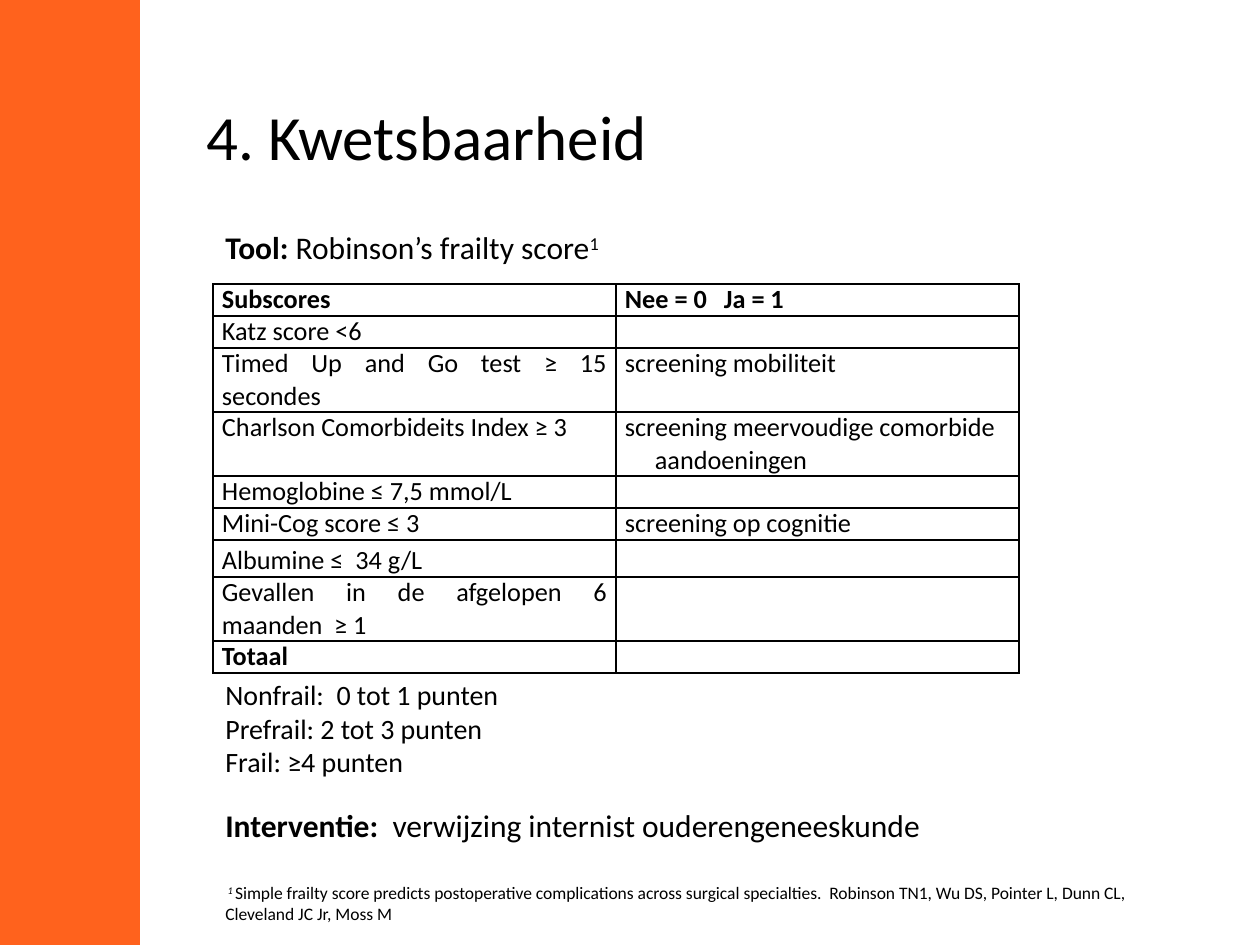
from lxml import etree
from pptx import Presentation
from pptx import util as u
from pptx.dml import color
from pptx.enum import shapes, text
from pptx.oxml import ns

SCALE = 914400 / 126
INK = "000000"


def px(n):
    return u.Emu(round(n * SCALE))


def style(para, size, bold=None):
    para.font.name = "Calibri"
    para.font.size = u.Pt(size)
    para.font.bold = bold
    para.font.color.rgb = color.RGBColor.from_string(INK)


deck = Presentation()
deck.slide_width, deck.slide_height = px(1260), px(945)
slide = deck.slides.add_slide(deck.slide_layouts[6])

band = slide.shapes.add_shape(shapes.MSO_SHAPE.RECTANGLE, 0, 0, px(140), px(945))
band.shadow.inherit = False
band.fill.solid()
band.fill.fore_color.rgb = color.RGBColor.from_string("FF621D")
band.line.fill.background()

title = slide.shapes.add_textbox(px(194), px(76), px(1050), px(118)).text_frame
title.word_wrap = True
title.vertical_anchor = text.MSO_ANCHOR.MIDDLE
title.text = "4. Kwetsbaarheid"
style(title.paragraphs[0], 36)

rows = [
    (32, "Subscores", "Nee = 0\tJa = 1"),
    (32, "Katz score <6", ""),
    (64, "Timed Up and Go test ≥ 15 secondes", "screening mobiliteit"),
    (64, "Charlson Comorbideits Index ≥ 3", "screening meervoudige comorbide aandoeningen"),
    (32, "Hemoglobine ≤ 7,5 mmol/L", ""),
    (32, "Mini-Cog score ≤ 3", "screening op cognitie"),
    (37, "Albumine ≤  34 g/L", ""),
    (64, "Gevallen in de afgelopen 6 maanden  ≥ 1", ""),
    (32, "Totaal", ""),
]
high = sum(row[0] for row in rows)
table = slide.shapes.add_table(len(rows), 2, px(213), px(284), px(806), px(high)).table
table.first_row = table.horz_banding = False
for col in table.columns:
    col.width = px(403)

for i, (tall, *words) in enumerate(rows):
    table.rows[i].height = px(tall)
    for j, word in enumerate(words):
        cell = table.cell(i, j)
        cell.margin_left = cell.margin_right = px(9)
        cell.margin_top = cell.margin_bottom = 0
        para = cell.text_frame.paragraphs[0]
        props = para._p.get_or_add_pPr()
        if "\t" in word:
            tabs = etree.SubElement(props, ns.qn("a:tabLst"))
            etree.SubElement(tabs, ns.qn("a:tab"), pos=str(px(99)), algn="l")
        if "meervoudige" in word:
            props.set("marL", str(px(30)))
            props.set("indent", str(-px(30)))
        if word:
            para.add_run().text = word
        else:
            etree.SubElement(para._p, ns.qn("a:endParaRPr"), sz="1500")
        style(para, 15, i in (0, len(rows) - 1))
        if word.startswith("Albumine"):
            para.line_spacing = 1.15
        elif j == 0 and 0 < i < len(rows) - 1:
            para.alignment = text.PP_ALIGN.JUSTIFY
        edges = cell._tc.get_or_add_tcPr()
        for side in ("lnL", "lnR", "lnT", "lnB"):
            line = etree.SubElement(edges, ns.qn("a:" + side), w="12700")
            fill = etree.SubElement(line, ns.qn("a:solidFill"))
            etree.SubElement(fill, ns.qn("a:srgbClr"), val=INK)
        cell.fill.background()

ranks = slide.shapes.add_textbox(px(213), px(635), px(319), px(144)).text_frame
ranks.word_wrap = False
ranks.vertical_anchor = text.MSO_ANCHOR.MIDDLE
ranks.margin_top, ranks.margin_bottom = px(42), 0
ranks.text = "Nonfrail:  0 tot 1 punten\nPrefrail: 2 tot 3 punten\nFrail: ≥4 punten"
for para in ranks.paragraphs:
    style(para, 16)

tool = slide.shapes.add_textbox(px(213), px(222), px(824), px(50)).text_frame
plan = slide.shapes.add_textbox(px(213), px(800), px(983), px(136)).text_frame
tool.word_wrap = plan.word_wrap = True
note = plan.add_paragraph()
note.space_before = u.Pt(22)
cite = ("Simple frailty score predicts postoperative complications across surgical "
        "specialties.  Robinson TN1, Wu DS, Pointer L, Dunn CL, Cleveland JC Jr, Moss M")
lines = [
    (tool.paragraphs[0], 18, [("Tool: ", "b"), ("Robinson’s frailty score", ""), ("1", "s")]),
    (plan.paragraphs[0], 18, [("Interventie:  ", "b"),
                              ("verwijzing internist ouderengeneeskunde", "")]),
    (note, 10, [(" 1 ", "si"), (cite, "")]),
]
for para, size, parts in lines:
    style(para, size)
    for word, mark in parts:
        run = para.add_run()
        run.text = word
        if "b" in mark:
            run.font.bold = True
        if "i" in mark:
            run.font.italic = True
        if "s" in mark:
            run._r.get_or_add_rPr().set("baseline", "30000")

deck.save("out.pptx")
